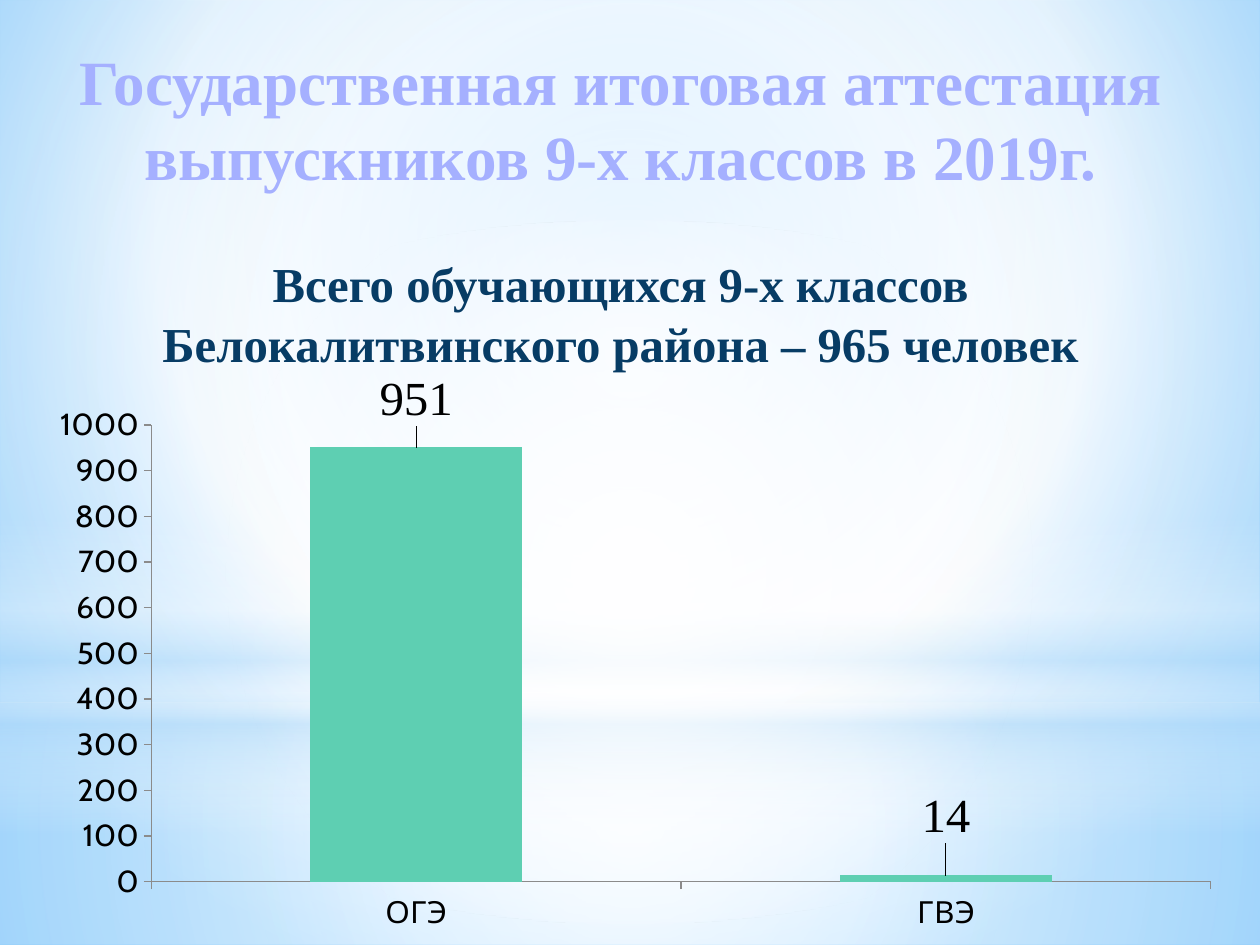
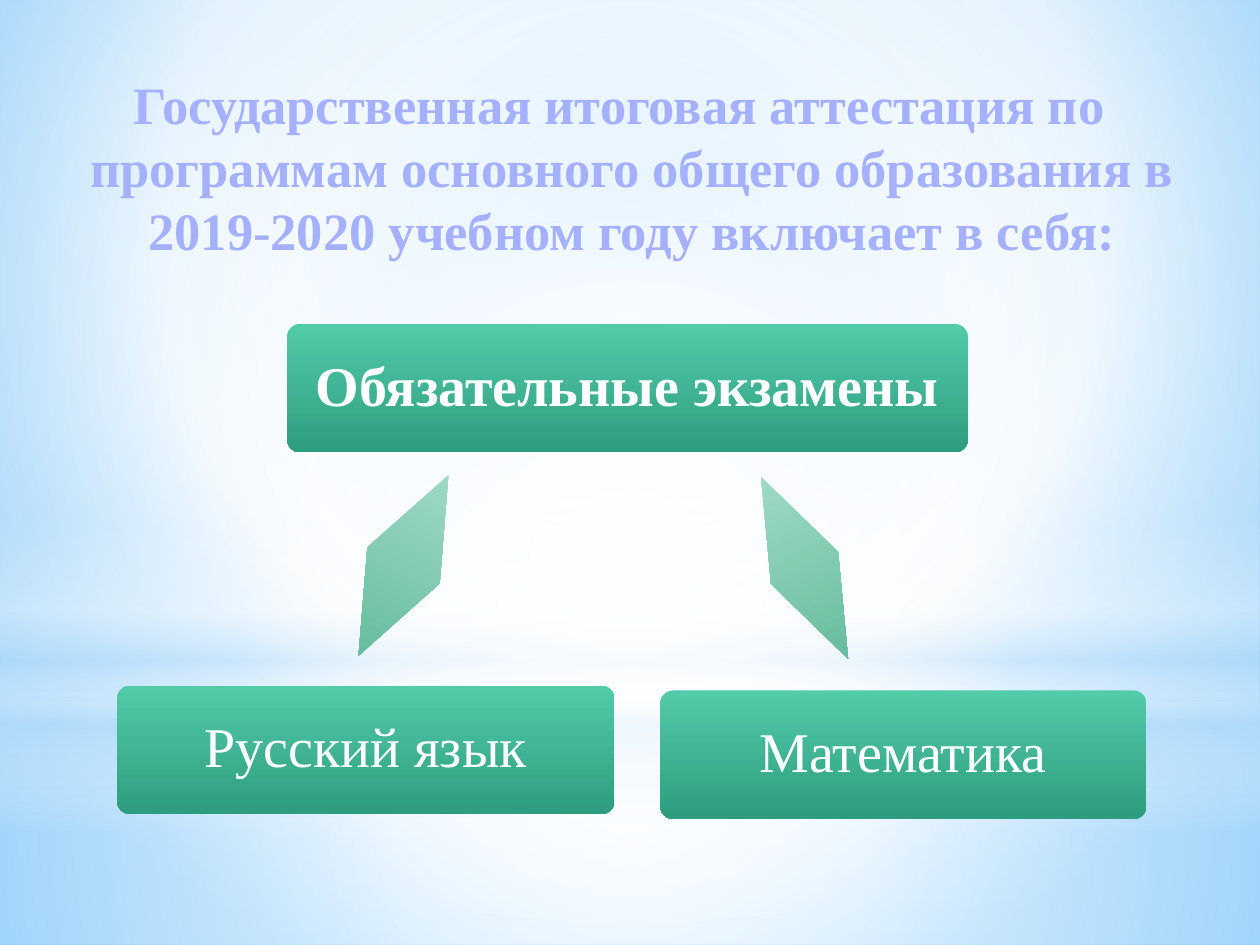
"""Build two slides on the state final certification of ninth-grade pupils."""
from lxml import etree
from pptx import Presentation
from pptx.chart.data import CategoryChartData
from pptx.dml.color import RGBColor
from pptx.enum.chart import XL_CHART_TYPE, XL_LABEL_POSITION, XL_TICK_MARK
from pptx.enum.shapes import MSO_SHAPE
from pptx.enum.text import MSO_ANCHOR, MSO_AUTO_SIZE, PP_ALIGN
from pptx.oxml import parse_xml
from pptx.oxml.ns import nsdecls, qn
from pptx.util import Cm, Pt

COLUMN_CLUSTERED = XL_CHART_TYPE.COLUMN_CLUSTERED
OUTSIDE_END = XL_LABEL_POSITION.OUTSIDE_END
TICK_OUTSIDE = XL_TICK_MARK.OUTSIDE
RECTANGLE = MSO_SHAPE.RECTANGLE
OVAL = MSO_SHAPE.OVAL
ROUNDED_RECTANGLE = MSO_SHAPE.ROUNDED_RECTANGLE
LEFT_RIGHT_ARROW = MSO_SHAPE.LEFT_RIGHT_ARROW
ANCHOR_TOP = MSO_ANCHOR.TOP
ANCHOR_MIDDLE = MSO_ANCHOR.MIDDLE
NO_AUTOFIT = MSO_AUTO_SIZE.NONE
CENTER = PP_ALIGN.CENTER

TEXT_FONT = "Times New Roman"
CHART_FONT = "Cabin"
COLORS = {
    "title": "A5B0FF",
    "subtitle": "073C65",
    "white": "FFFFFF",
    "black": "000000",
    "haze": "B4DCFA",
    "sky": "9ED5FF",
    "deep_sky": "5BB9FF",
    "bar": "5ECFB2",
    "axis": "8B8B8B",
    "box_top": "52CBA9",
    "box_bottom": "2E9D7F",
    "arrow_top": "A7DECB",
    "arrow_bottom": "5EB899",
}
CIRCLE_CENTER = (50, 50, 50, 50)


def set_gradient(properties, stops, circle=None):
    """Replace a solid fill by a vertical gradient, or a circular one."""
    stop_xml = "".join(
        f'<a:gs pos="{position * 1000}"><a:srgbClr val="{COLORS[color]}">'
        f'<a:alpha val="{opacity * 1000}"/></a:srgbClr></a:gs>'
        for position, color, opacity in stops
    )
    direction = '<a:lin ang="5400000" scaled="0"/>'
    if circle:
        left, top, right, bottom = (side * 1000 for side in circle)
        direction = (
            f'<a:path path="circle"><a:fillToRect l="{left}" t="{top}" '
            f'r="{right}" b="{bottom}"/></a:path>'
        )
    gradient = parse_xml(
        f'<a:gradFill {nsdecls("a")} rotWithShape="1">'
        f"<a:gsLst>{stop_xml}</a:gsLst>{direction}</a:gradFill>"
    )
    properties.replace(properties.find(qn("a:solidFill")), gradient)


def add_text(paragraph, text, size, color, bold):
    """Add one centred run in the text font."""
    paragraph.alignment = CENTER
    run = paragraph.add_run()
    run.text = text
    run.font.name = TEXT_FONT
    run.font.size = Pt(size)
    run.font.bold = bold
    run.font.color.rgb = RGBColor.from_string(COLORS[color])


presentation = Presentation()
presentation.slide_width = Cm(25.4)
presentation.slide_height = Cm(19.05)
title_only = presentation.slide_layouts[5]
chart_slide = presentation.slides.add_slide(title_only)
exams_slide = presentation.slides.add_slide(title_only)

master = presentation.slide_master
master.background.fill.solid()
set_gradient(
    master.element.find(".//" + qn("p:bgPr")),
    [(0, "sky", 100), (60, "white", 100), (100, "deep_sky", 100)],
    (20, 10, 20, 60),
)
backdrop = [
    (RECTANGLE, 14.17, 4.88, CIRCLE_CENTER,
     [(0, "white", 91), (37, "white", 76), (100, "haze", 79)]),
    (RECTANGLE, 0, 14.17, CIRCLE_CENTER,
     [(0, "white", 89), (48, "white", 62), (100, "haze", 79)]),
    (RECTANGLE, 10.46, 6.35, None,
     [(0, "white", 0), (29, "white", 30), (45, "haze", 40),
      (55, "white", 26), (65, "haze", 60), (100, "white", 0)]),
    (OVAL, 4.45, 14.17, CIRCLE_CENTER,
     [(0, "white", 100), (56, "white", 0)]),
]
for index, (kind, top, height, circle, stops) in enumerate(backdrop):
    shape = chart_slide.shapes.add_shape(
        kind, Cm(0), Cm(top), presentation.slide_width, Cm(height)
    )
    shape.shadow.inherit = False
    shape.line.fill.background()
    shape.fill.solid()
    set_gradient(shape.element.spPr, stops, circle)
    master.shapes.element.insert(2 + index, shape.element)

titles = [
    (chart_slide, (0.89, 0.74, 23.24, 6.73), [
        ("Государственная итоговая аттестация выпускников 9-х классов в 2019г.",
         36, 43, 0, "title"),
        ("Всего обучающихся 9-х классов Белокалитвинского района – 965 человек",
         27.9, 34, 34, "subtitle"),
    ]),
    (exams_slide, (0.71, 1.32, 23.42, 4.9), [
        ("Государственная итоговая аттестация по программам основного общего "
         "образования в 2019-2020 учебном году включает в себя:",
         30, 36, 0, "title"),
    ]),
]
for slide, bounds, paragraphs in titles:
    title = slide.shapes.title
    title.left, title.top, title.width, title.height = map(Cm, bounds)
    frame = title.text_frame
    frame.word_wrap = True
    frame.auto_size = NO_AUTOFIT
    frame.vertical_anchor = ANCHOR_TOP
    for index, (text, size, spacing, before, color) in enumerate(paragraphs):
        paragraph = frame.add_paragraph() if index else frame.paragraphs[0]
        paragraph.line_spacing = Pt(spacing)
        paragraph.space_before = Pt(before)
        add_text(paragraph, text, size, color, True)

heading_properties = exams_slide.shapes.title.text_frame.paragraphs[0]._p.get_or_add_pPr()
heading_properties.set("marL", str(Cm(0.64)))
heading_properties.set("indent", str(-Cm(0.51)))

chart_data = CategoryChartData()
chart_data.categories = ["ОГЭ", "ГВЭ"]
chart_data.add_series("Series 1", [951, 14])
chart = chart_slide.shapes.add_chart(
    COLUMN_CLUSTERED, Cm(0.89), Cm(7.54), Cm(24), Cm(11.46), chart_data
).chart
chart.has_legend = False
chart.has_title = False
chart.font.name = CHART_FONT
chart.font.size = Pt(18)
chart.font.color.rgb = RGBColor.from_string(COLORS["black"])
for axis in (chart.category_axis, chart.value_axis):
    axis.has_major_gridlines = False
    axis.major_tick_mark = TICK_OUTSIDE
    axis.format.line.color.rgb = RGBColor.from_string(COLORS["axis"])
chart.value_axis.minimum_scale = 0
chart.value_axis.maximum_scale = 1000
chart.value_axis.major_unit = 100

plot = chart.plots[0]
plot.gap_width = 150
plot.vary_by_categories = False
series = plot.series[0]
series.format.fill.solid()
series.format.fill.fore_color.rgb = RGBColor.from_string(COLORS["bar"])
for index, shift in enumerate((-0.03, -0.05)):
    label = series.points[index].data_label
    label.position = OUTSIDE_END
    label.font.name = TEXT_FONT
    label.font.size = Pt(28)
    label.font.color.rgb = RGBColor.from_string(COLORS["black"])
    label_index = series._element.findall(".//" + qn("c:dLbl"))[index].find(qn("c:idx"))
    label_index.addnext(parse_xml(
        f'<c:layout {nsdecls("c")}><c:manualLayout><c:x val="0"/>'
        f'<c:y val="{shift}"/></c:manualLayout></c:layout>'
    ))

plot_area = chart.element.find(".//" + qn("c:plotArea"))
for old_layout in plot_area.findall(qn("c:layout")):
    plot_area.remove(old_layout)
layout = etree.Element(qn("c:layout"))
manual_layout = etree.SubElement(layout, qn("c:manualLayout"))
for tag, value in (
    ("layoutTarget", "inner"), ("xMode", "edge"), ("yMode", "edge"),
    ("x", "0.09"), ("y", "0.06"), ("w", "0.89"), ("h", "0.83"),
):
    etree.SubElement(manual_layout, qn(f"c:{tag}")).set("val", value)
plot_area.insert(0, layout)

exam_boxes = [
    ("Обязательные экзамены", 5.79, 6.53, 13.72, True),
    ("Математика", 13.31, 13.92, 9.8, False),
    ("Русский язык", 2.36, 13.82, 10.03, False),
]
for text, left, top, width, bold in exam_boxes:
    box = exams_slide.shapes.add_shape(
        ROUNDED_RECTANGLE, Cm(left), Cm(top), Cm(width), Cm(2.59)
    )
    box.adjustments[0] = 0.1
    box.shadow.inherit = False
    box.line.fill.background()
    box.fill.solid()
    set_gradient(box.element.spPr, [(0, "box_top", 100), (100, "box_bottom", 100)])
    frame = box.text_frame
    frame.word_wrap = True
    frame.vertical_anchor = ANCHOR_MIDDLE
    frame.paragraphs[0].line_spacing = 0.9
    add_text(frame.paragraphs[0], text, 32, "white", bold)

for left, top, width, rotation in (
    (15.47, 9.42, 1.5, 334.4),
    (7.32, 9.37, 1.63, 26.5),
):
    arrow = exams_slide.shapes.add_shape(
        LEFT_RIGHT_ARROW, Cm(left), Cm(top), Cm(width), Cm(4.06)
    )
    arrow.adjustments[0] = 0.6
    arrow.adjustments[1] = 0.5
    arrow.rotation = rotation
    arrow.shadow.inherit = False
    arrow.line.fill.background()
    arrow.fill.solid()
    set_gradient(arrow.element.spPr, [(0, "arrow_top", 100), (100, "arrow_bottom", 100)])

presentation.save("out.pptx")
